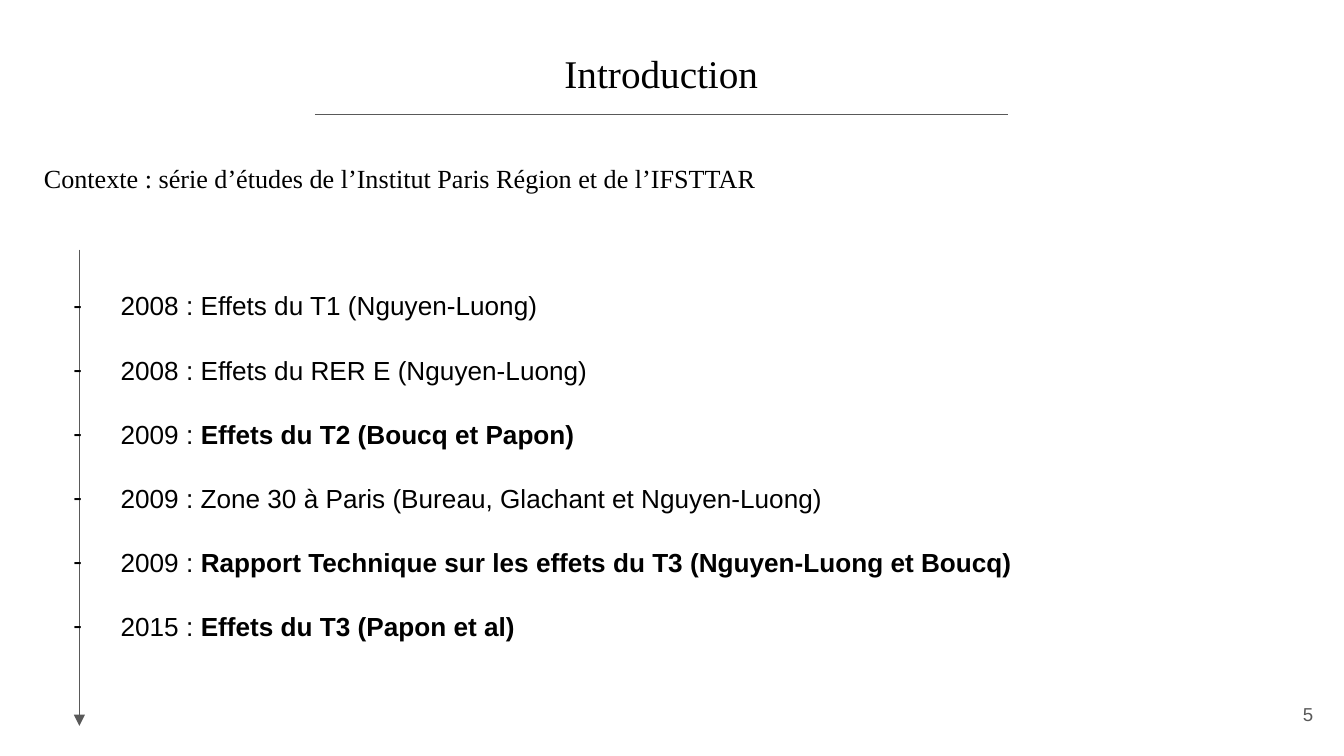
from lxml.etree import SubElement
from pptx import Presentation
from pptx.dml.color import RGBColor
from pptx.enum.shapes import MSO_CONNECTOR as Connector
from pptx.enum.text import MSO_ANCHOR as Anchor, PP_ALIGN as Align
from pptx.oxml.ns import qn
from pptx.util import Cm, Pt

BLACK = RGBColor(0x00, 0x00, 0x00)
GREY = RGBColor(0x59, 0x59, 0x59)
SERIF = "Times New Roman"
SANS = "Arial"

deck = Presentation()
deck.slide_width, deck.slide_height = Cm(25.4), Cm(14.29)
page = deck.slides.add_slide(deck.slide_layouts[6])


def add_line(x1, y1, x2, y2):
    line = page.shapes.add_connector(
        Connector.STRAIGHT, Cm(x1), Cm(y1), Cm(x2), Cm(y2))
    line.line.color.rgb = GREY
    line.line.width = Pt(0.75)
    SubElement(line._element.spPr, qn("a:effectLst"))
    return line


def add_text(left, top, width, height, paragraphs, font, size, color=BLACK,
             **para_format):
    """Add a text box; each paragraph is a list of (text, bold) spans."""
    box = page.shapes.add_textbox(Cm(left), Cm(top), Cm(width), Cm(height))
    frame = box.text_frame
    frame.word_wrap = True
    for side in ("left", "top", "right", "bottom"):
        setattr(frame, f"margin_{side}", Cm(0.25))
    for number, spans in enumerate(paragraphs):
        para = frame.add_paragraph() if number else frame.paragraphs[0]
        for name, value in para_format.items():
            setattr(para, name, value)
        for text, bold in spans:
            span = para.add_run()
            span.text = text
            span.font.color.rgb = color
            font_format = {"name": font, "size": Pt(size), "bold": bold}
            for name, value in font_format.items():
                setattr(span.font, name, value)
    return frame


# Title and context
add_line(5.95, 2.16, 19.05, 2.16)
add_text(5.95, 0.69, 13.1, 1.42, [[("Introduction", False)]], SERIF, 21,
         alignment=Align.CENTER)
context = "Contexte : série d’études de l’Institut Paris Région et de l’IFSTTAR"
add_text(0.58, 2.82, 24.64, 1.12, [[(context, False)]], SERIF, 14)

# Timeline arrow
timeline = add_line(1.5, 4.72, 1.5, 13.72)
SubElement(timeline.line._get_or_add_ln(), qn("a:tailEnd"), type="triangle")

# Studies: year, title, highlighted
studies = [
    ("2008", "Effets du T1 (Nguyen-Luong)", False),
    ("2008", "Effets du RER E (Nguyen-Luong)", False),
    ("2009", "Effets du T2 (Boucq et Papon)", True),
    ("2009", "Zone 30 à Paris (Bureau, Glachant et Nguyen-Luong)", False),
    ("2009", "Rapport Technique sur les effets du T3 (Nguyen-Luong et Boucq)", True),
    ("2015", "Effets du T3 (Papon et al)", True),
]
study_list = add_text(
    0.76, 5.23, 19.33, 7.09,
    [[(f"{year} : ", False), (title, bold)] for year, title, bold in studies],
    SANS, 14)
for number, para in enumerate(study_list.paragraphs):
    if number:
        para.space_before = Pt(17.5)
    properties = para._p.get_or_add_pPr()
    properties.set("marL", str(Cm(1.27)))
    properties.set("indent", str(-Cm(0.89)))
    bullet_color = SubElement(properties, qn("a:buClr"))
    SubElement(bullet_color, qn("a:srgbClr"), val=str(BLACK))
    SubElement(properties, qn("a:buFont"), typeface=SANS)
    SubElement(properties, qn("a:buChar"), char="-")

# Page number
page_number = add_text(23.55, 12.95, 1.52, 1.09, [[("5", False)]], SANS, 10,
                       GREY, alignment=Align.RIGHT)
page_number.vertical_anchor = Anchor.MIDDLE

deck.save("out.pptx")
